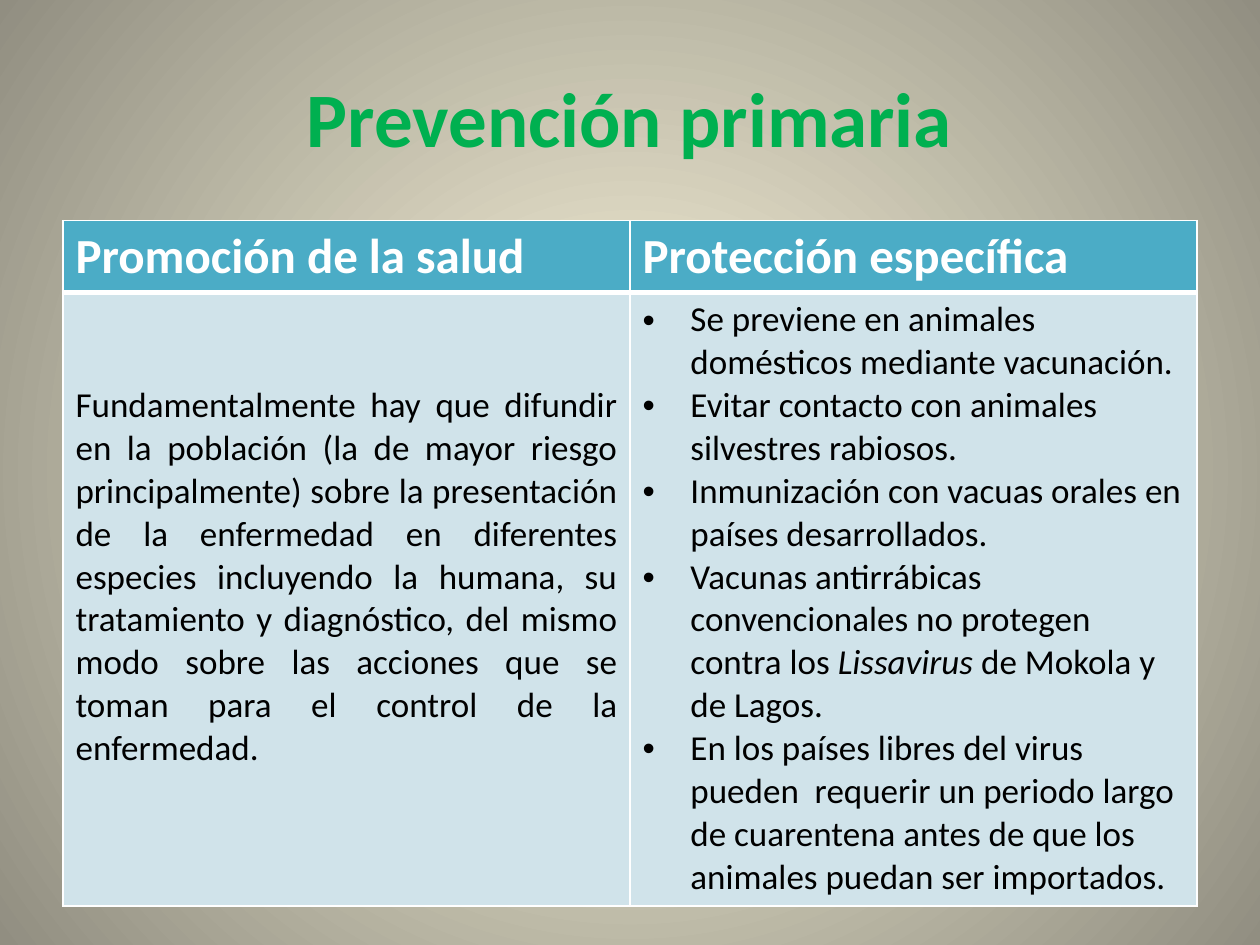
from lxml.etree import SubElement as Sub
from pptx import Presentation
from pptx.dml.color import RGBColor
from pptx.enum.text import MSO_ANCHOR as Anchor, PP_ALIGN as Align
from pptx.oxml.ns import qn
from pptx.util import Pt

SCALE = 9144
FONT = "Calibri"
HEADS = ["Promoción de la salud", "Protección específica"]
HEALTH = (
    "Fundamentalmente hay que difundir en la población (la de mayor riesgo "
    "principalmente) sobre la presentación de la enfermedad en diferentes "
    "especies incluyendo la humana, su tratamiento y diagnóstico, del mismo "
    "modo sobre las acciones que se toman para el control de la enfermedad."
)
STEPS = [
    ["Se previene en animales domésticos mediante vacunación."],
    ["Evitar contacto con animales silvestres rabiosos."],
    ["Inmunización con vacuas orales en países desarrollados."],
    ["Vacunas antirrábicas convencionales no protegen contra los ",
     "Lissavirus ", "de Mokola y de Lagos."],
    ["En los países libres del virus pueden  requerir un periodo largo de "
     "cuarentena antes de que los animales puedan ser importados."],
]


def px(num):
    """Turn px into EMU."""
    return num * SCALE


def color(code):
    """Turn a hex string into a colour."""
    return RGBColor.from_string(code)


def style(para, size, code, bold=False, align=Align.LEFT):
    """Set the font and alignment of a paragraph."""
    font = para.font
    font.name, font.size, font.bold = FONT, Pt(size), bold
    font.color.rgb = color(code)
    para.alignment = align


def bullet(para, indent):
    """Give a paragraph a hanging bullet."""
    props = para._p.get_or_add_pPr()
    props.set("marL", str(px(indent)))
    props.set("indent", str(-px(indent)))
    mark = Sub(props, qn("a:buFont"))
    mark.set("typeface", "Arial")
    Sub(props, qn("a:buChar")).set("char", "•")
    props.append(props.find(qn("a:defRPr")))


def edge(cell, side, width):
    """Draw one white border of a cell."""
    line = Sub(cell._tc.get_or_add_tcPr(), qn(f"a:ln{side}"))
    line.set("w", str(Pt(width)))
    Sub(Sub(line, qn("a:solidFill")), qn("a:srgbClr")).set("val", "FFFFFF")


def paint(cell, code, widths):
    """Set the borders and fill of a cell."""
    for side, width in zip("LRTB", widths):
        edge(cell, side, width)
    cell.fill.solid()
    cell.fill.fore_color.rgb = color(code)


def backdrop(slide):
    """Fill the background with a circular gradient."""
    fill = slide.background.fill
    fill.gradient()
    for stop, code, place in zip(fill.gradient_stops, ["FCF7DD", "918E81"], [0, 1]):
        stop.color.rgb = color(code)
        stop.position = place
    lin = slide.element.find(".//" + qn("a:lin"))
    grad = lin.getparent()
    grad.remove(lin)
    round_ = Sub(grad, qn("a:path"))
    round_.set("path", "circle")
    rect = Sub(round_, qn("a:fillToRect"))
    for side in "ltrb":
        rect.set(side, "50000")


def title(slide, left, top, width, height):
    """Place the centred heading in its box."""
    frame = slide.shapes.add_textbox(px(left), px(top), px(width), px(height)).text_frame
    frame.word_wrap = True
    frame.vertical_anchor = Anchor.MIDDLE
    para = frame.paragraphs[0]
    para.text = "Prevención primaria"
    style(para, 44, "00B050", True, Align.CENTER)


def steps(cell):
    """Write the bulleted measures into a cell."""
    frame = cell.text_frame
    for pos, parts in enumerate(STEPS):
        para = frame.add_paragraph() if pos else frame.paragraphs[0]
        for part in parts:
            run = para.add_run()
            run.text = part
            if part.startswith("Lissavirus"):
                run.font.italic = True
        style(para, 20, "000000")
        bullet(para, 38)


def grid(slide, left, top, width, height):
    """Place the two-column prevention table in its box."""
    head = 57
    table = slide.shapes.add_table(
        2, 2, px(left), px(top), px(width), px(height)).table
    table.rows[0].height = px(head)
    table.rows[1].height = px(height - head)
    for col, text in enumerate(HEADS):
        cell = table.cell(0, col)
        cell.text = text
        style(cell.text_frame.paragraphs[0], 28, "FFFFFF", True)
        paint(cell, "4BACC6", [1, 1, 1, 3])
        paint(table.cell(1, col), "D0E3EA", [1, 1, 3, 1])
    health = table.cell(1, 0)
    health.text = HEALTH
    health.margin_top = px(73)
    style(health.text_frame.paragraphs[0], 20, "000000", align=Align.JUSTIFY)
    steps(table.cell(1, 1))


def main():
    """Build and save the slide."""
    deck = Presentation()
    deck.slide_width, deck.slide_height = px(1000), px(750)
    slide = deck.slides.add_slide(deck.slide_layouts[6])
    backdrop(slide)
    title(slide, 50, 30, 900, 125)
    grid(slide, 50, 175, 900, 544)
    deck.save("out.pptx")


if __name__ == "__main__":
    main()
